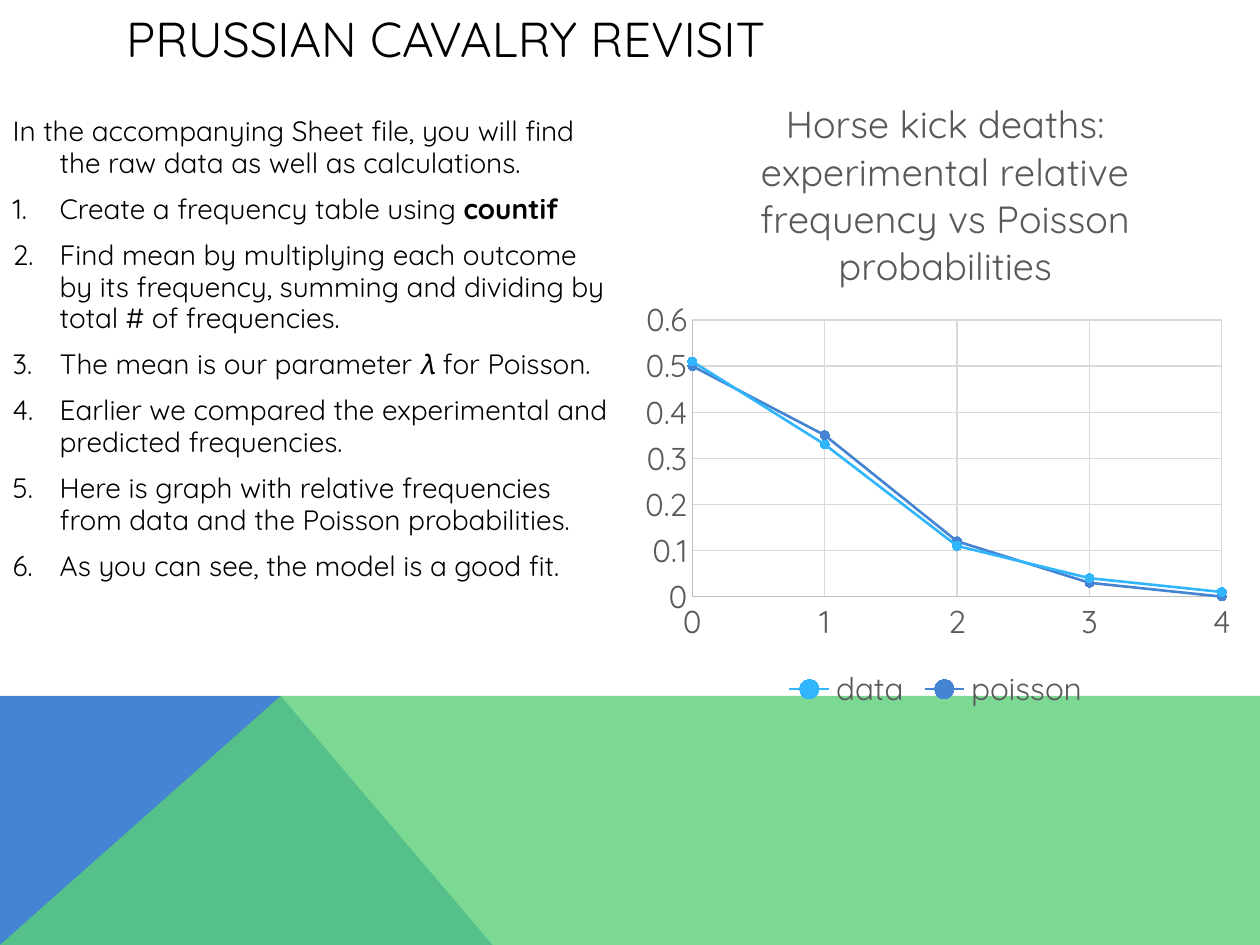
import pptx
import pptx.chart.data
import pptx.enum.chart
import pptx.enum.text
import pptx.oxml
import pptx.oxml.ns
import pptx.util
from pptx.dml.color import RGBColor
from pptx.util import Cm, Pt

FONT = "Quicksand"
HUES = {"text": "000000", "label": "595959", "axis": "BFBFBF", "grid": "D9D9D9",
        "sky": "31B6FD", "blue": "4584D3", "green": "5BD078"}
qn = pptx.oxml.ns.qn


def style(font, size, hue, bold=False):
    font.name, font.size, font.bold = FONT, Pt(size), bold
    font.color.rgb = RGBColor.from_string(HUES[hue])


def set_layout(parent, after, **values):
    """Give a chart part a fixed place, as fractions of the chart."""
    for old in parent.findall(qn("c:layout")):
        parent.remove(old)
    tags = "".join(f'<c:{key} val="{val}"/>' for key, val in values.items())
    node = pptx.oxml.parse_xml(
        f'<c:layout {pptx.oxml.ns.nsdecls("c")}><c:manualLayout>{tags}'
        "</c:manualLayout></c:layout>")
    if after is None:
        parent.insert(0, node)
    else:
        after.addnext(node)


prs = pptx.Presentation()
prs.slide_width, prs.slide_height = Cm(25.4), Cm(19.05)
slide = prs.slides.add_slide(prs.slide_layouts[1])
shapes = slide.shapes

# Footer: a blue triangle under a translucent green band
base, top, peak = 19.05, 14.03, 5.66
bands = [
    ("blue", 100, [(0, base), (0, top), (peak, top), (9.93, base)]),
    ("green", 80, [(0, base), (peak, top), (25.4, top), (25.4, base)]),
]
for hue, alpha, points in bands:
    points = [(Cm(x), Cm(y)) for x, y in points]
    pen = shapes.build_freeform(*points[0])
    pen.add_line_segments(points[1:], close=True)
    band = pen.convert_to_shape()
    band.shadow.inherit = False
    band.line.fill.background()
    band.fill.solid()
    band.fill.fore_color.rgb = RGBColor.from_string(HUES[hue])
    if alpha < 100:
        tint = band.fill._xPr.find(".//" + qn("a:srgbClr"))
        tint.append(pptx.oxml.parse_xml(
            f'<a:alpha {pptx.oxml.ns.nsdecls("a")} val="{alpha * 1000}"/>'))

# Title
title = shapes.title
title.left, title.top, title.width, title.height = Cm(2.29), Cm(0), Cm(20.88), Cm(1.52)
frame = title.text_frame
frame.text = "PRUSSIAN CAVALRY REVISIT"
frame.auto_size = pptx.enum.text.MSO_AUTO_SIZE.NONE
frame.vertical_anchor = pptx.enum.text.MSO_ANCHOR.MIDDLE
frame.paragraphs[0].alignment = pptx.enum.text.PP_ALIGN.LEFT
style(frame.paragraphs[0].runs[0].font, 28, "text")

# Numbered steps below an opening line
steps = [
    "In the accompanying Sheet file, you will find the raw data as well as calculations.",
    "Create a frequency table using ",
    "Find mean by multiplying each outcome by its frequency, summing and dividing "
    "by total # of frequencies.",
    "The mean is our parameter 𝜆 for Poisson.",
    "Earlier we compared the experimental and predicted frequencies.",
    "Here is graph with relative frequencies from data and the Poisson probabilities.",
    "As you can see, the model is a good fit.",
]
body = slide.placeholders[1]
body.left, body.top, body.width, body.height = Cm(0), Cm(2.21), Cm(12.67), Cm(11.15)
frame = body.text_frame
frame.text = "\n".join(steps)
frame.auto_size = pptx.enum.text.MSO_AUTO_SIZE.NONE
frame.paragraphs[1].add_run().text = "countif"
for num, para in enumerate(frame.paragraphs):
    para.line_spacing = 0.95
    para.space_before = Pt(8)
    for run in para.runs:
        style(run.font, 16, "text", bold=run.text == "countif")
    props = para._p.get_or_add_pPr()
    props.set("marL", str(Cm(0.95)))
    props.set("indent", str(-Cm(0.95)))
    if num:
        pptx.oxml.ns.nsdecls("a")
        props.append(props.makeelement(qn("a:buFontTx"), {}))
        props.append(props.makeelement(qn("a:buAutoNum"), {"type": "arabicPeriod"}))
    else:
        props.append(props.makeelement(qn("a:buNone"), {}))

# Chart
lines = [
    ("data", "sky", [0.51, 0.33, 0.11, 0.04, 0.01]),
    ("poisson", "blue", [0.5, 0.35, 0.12, 0.03, 0]),
]
data = pptx.chart.data.XyChartData()
for name, _, vals in lines:
    row = data.add_series(name)
    for x, y in enumerate(vals):
        row.add_data_point(x, y)
chart = shapes.add_chart(
    pptx.enum.chart.XL_CHART_TYPE.XY_SCATTER_LINES,
    Cm(12.73), Cm(1.14), Cm(12.27), Cm(13.28), data).chart
style(chart.font, 18, "text")
chart.plots[0].vary_by_categories = False

for row, (_, hue, _) in zip(chart.plots[0].series, lines):
    tone = RGBColor.from_string(HUES[hue])
    row.smooth = False
    row.format.line.width = Pt(1.5)
    row.format.line.color.rgb = tone
    row.marker.style = pptx.enum.chart.XL_MARKER_STYLE.CIRCLE
    row.marker.size = 5
    row.marker.format.fill.solid()
    row.marker.format.fill.fore_color.rgb = tone
    row.marker.format.line.color.rgb = tone

for axis, high, step in [(chart.category_axis, 4, 1), (chart.value_axis, 0.6, 0.1)]:
    axis.minimum_scale, axis.maximum_scale, axis.major_unit = 0, high, step
    axis.major_tick_mark = axis.minor_tick_mark = pptx.enum.chart.XL_TICK_MARK.NONE
    axis.has_major_gridlines = True
    style(axis.tick_labels.font, 18, "label")
    axis.tick_labels.number_format = "General"
    axis.tick_labels.number_format_is_linked = False
    for line, hue in [(axis.format.line, "axis"),
                      (axis.major_gridlines.format.line, "grid")]:
        line.width = Pt(0.75)
        line.color.rgb = RGBColor.from_string(HUES[hue])

chart.has_title = True
head = chart.chart_title
head.text_frame.text = ("Horse kick deaths: experimental relative frequency "
                        "vs Poisson probabilities")
style(head.text_frame.paragraphs[0].runs[0].font, 21.6, "label")
head.include_in_layout = False
set_layout(head._element, head._element.find(qn("c:tx")),
           xMode="edge", yMode="edge", x=0.2, y=0.05)

chart.has_legend = True
chart.legend.position = pptx.enum.chart.XL_LEGEND_POSITION.BOTTOM
chart.legend.include_in_layout = False
style(chart.legend.font, 18, "label")

plot = chart._chartSpace.find(".//" + qn("c:plotArea"))
set_layout(plot, None, layoutTarget="inner", xMode="edge", yMode="edge",
           x=0.1, y=0.4, w=0.87, h=0.42)

prs.save("out.pptx")
